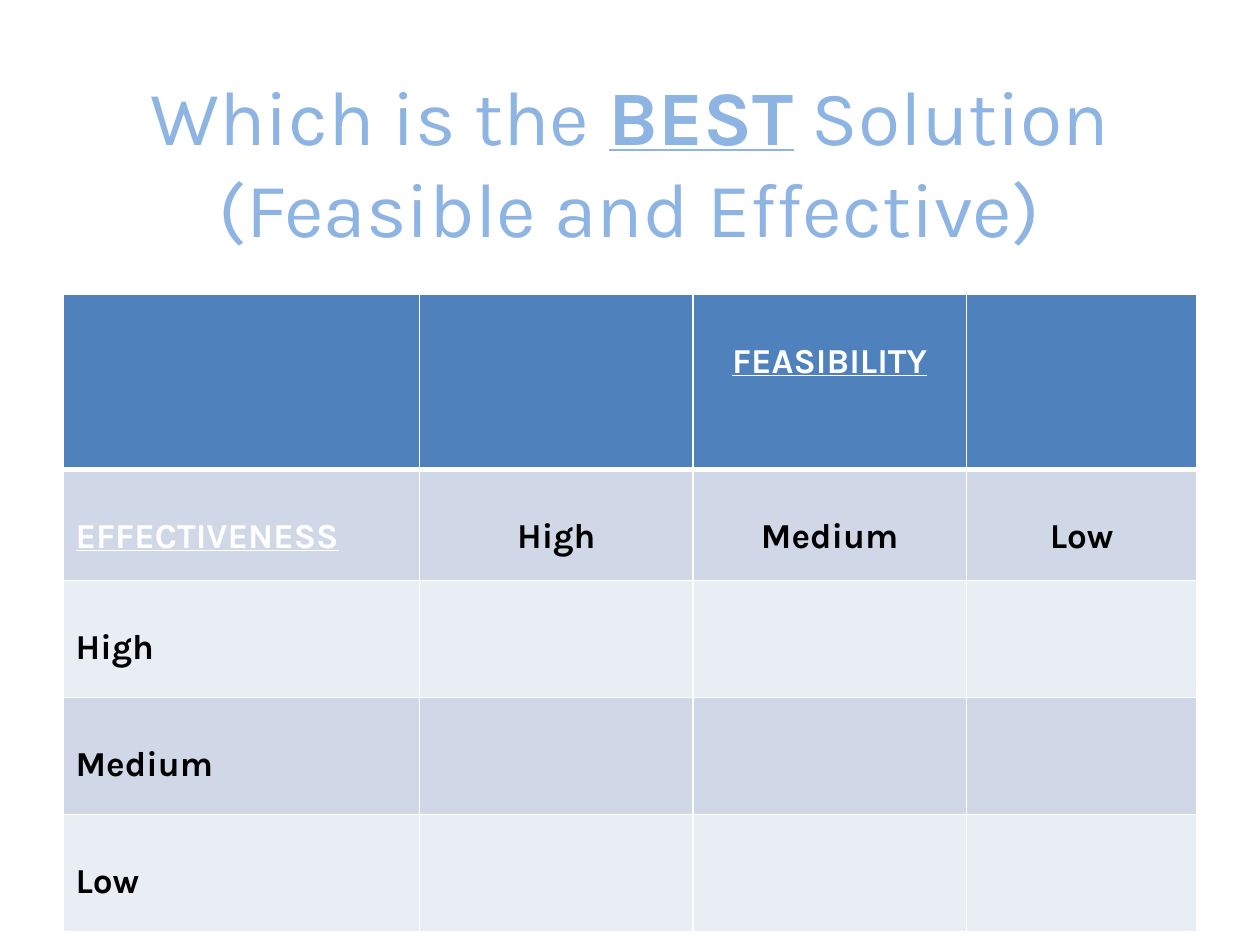
from dataclasses import dataclass

from lxml.etree import SubElement
from pptx import Presentation
from pptx.dml.color import RGBColor
from pptx.enum.text import MSO_ANCHOR, MSO_AUTO_SIZE, PP_ALIGN
from pptx.oxml.ns import qn
from pptx.util import Cm, Pt


@dataclass(frozen=True)
class Theme:
    font: str = "Karla"
    title_size: int = 44
    table_size: int = 20
    title: str = "8EB4E3"
    header: str = "4F81BD"
    dark_band: str = "D0D8E8"
    light_band: str = "E9EDF4"
    white: str = "FFFFFF"
    black: str = "000000"
    thin_line: int = 1
    thick_line: int = 3


THEME = Theme()

COLUMN_WIDTHS = (7.19, 5.51, 5.51, 4.65)
ROW_HEIGHTS = (3.53, 2.24, 2.36, 2.36, 2.36)
ROWS = (
    ("", "", "FEASIBILITY", ""),
    ("EFFECTIVENESS", "High", "Medium", "Low"),
    ("High", "", "", ""),
    ("Medium", "", "", ""),
    ("Low", "", "", ""),
)
AXIS_NAMES = ("FEASIBILITY", "EFFECTIVENESS")


def format_run(run, size, color, bold=False, underline=False):
    run.font.name = THEME.font
    run.font.size = Pt(size)
    run.font.color.rgb = RGBColor.from_string(color)
    run.font.bold = bold
    run.font.underline = underline


def add_title(slide):
    title = slide.shapes.title
    title.left, title.top, title.width, title.height = Cm(1.27), Cm(0.76), Cm(22.86), Cm(4.95)
    text_frame = title.text_frame
    text_frame.auto_size = MSO_AUTO_SIZE.NONE
    text_frame.vertical_anchor = MSO_ANCHOR.MIDDLE
    text_frame.text = "Which is the "
    paragraph = text_frame.paragraphs[0]
    paragraph.alignment = PP_ALIGN.CENTER
    paragraph.add_run().text = "BEST"
    paragraph.add_run().text = " Solution"
    paragraph.add_line_break()
    paragraph.add_run().text = "(Feasible and Effective)"
    for run in paragraph.runs:
        stressed = run.text == "BEST"
        format_run(run, THEME.title_size, THEME.title, stressed, stressed)


def set_borders(cell, top, bottom):
    """Draw white cell borders; call before the fill so the XML order is valid."""
    properties = cell._tc.get_or_add_tcPr()
    widths = {"L": THEME.thin_line, "R": THEME.thin_line, "T": top, "B": bottom}
    for side, width in widths.items():
        line = SubElement(properties, qn(f"a:ln{side}"), w=str(Pt(width)))
        fill = SubElement(line, qn("a:solidFill"))
        SubElement(fill, qn("a:srgbClr"), val=THEME.white)


def fill_cell(cell, text, row, column):
    # Borders: a heavier line parts the header from the body
    set_borders(
        cell,
        THEME.thick_line if row == 1 else THEME.thin_line,
        THEME.thick_line if row == 0 else THEME.thin_line,
    )

    # Header and banded rows
    band = THEME.dark_band if row % 2 else THEME.light_band
    cell.fill.solid()
    cell.fill.fore_color.rgb = RGBColor.from_string(band if row else THEME.header)

    # Label
    if text:
        cell.text_frame.text = text
        paragraph = cell.text_frame.paragraphs[0]
        paragraph.line_spacing = 2.0
        paragraph.alignment = PP_ALIGN.CENTER if column else PP_ALIGN.LEFT
        is_axis = text in AXIS_NAMES
        color = THEME.white if is_axis else THEME.black
        format_run(paragraph.runs[0], THEME.table_size, color, True, is_axis)


def add_rating_table(slide):
    frame = slide.shapes.add_table(
        len(ROWS), len(COLUMN_WIDTHS), Cm(1.27), Cm(5.93),
        Cm(sum(COLUMN_WIDTHS)), Cm(sum(ROW_HEIGHTS)),
    )
    table = frame.table
    for column, width in zip(table.columns, COLUMN_WIDTHS):
        column.width = Cm(width)
    for row, height in zip(table.rows, ROW_HEIGHTS):
        row.height = Cm(height)
    for row, texts in enumerate(ROWS):
        for column, text in enumerate(texts):
            fill_cell(table.cell(row, column), text, row, column)


def main():
    presentation = Presentation()
    presentation.slide_width, presentation.slide_height = Cm(25.4), Cm(19.05)
    slide = presentation.slides.add_slide(presentation.slide_layouts[5])
    add_title(slide)
    add_rating_table(slide)
    presentation.save("out.pptx")


if __name__ == "__main__":
    main()
